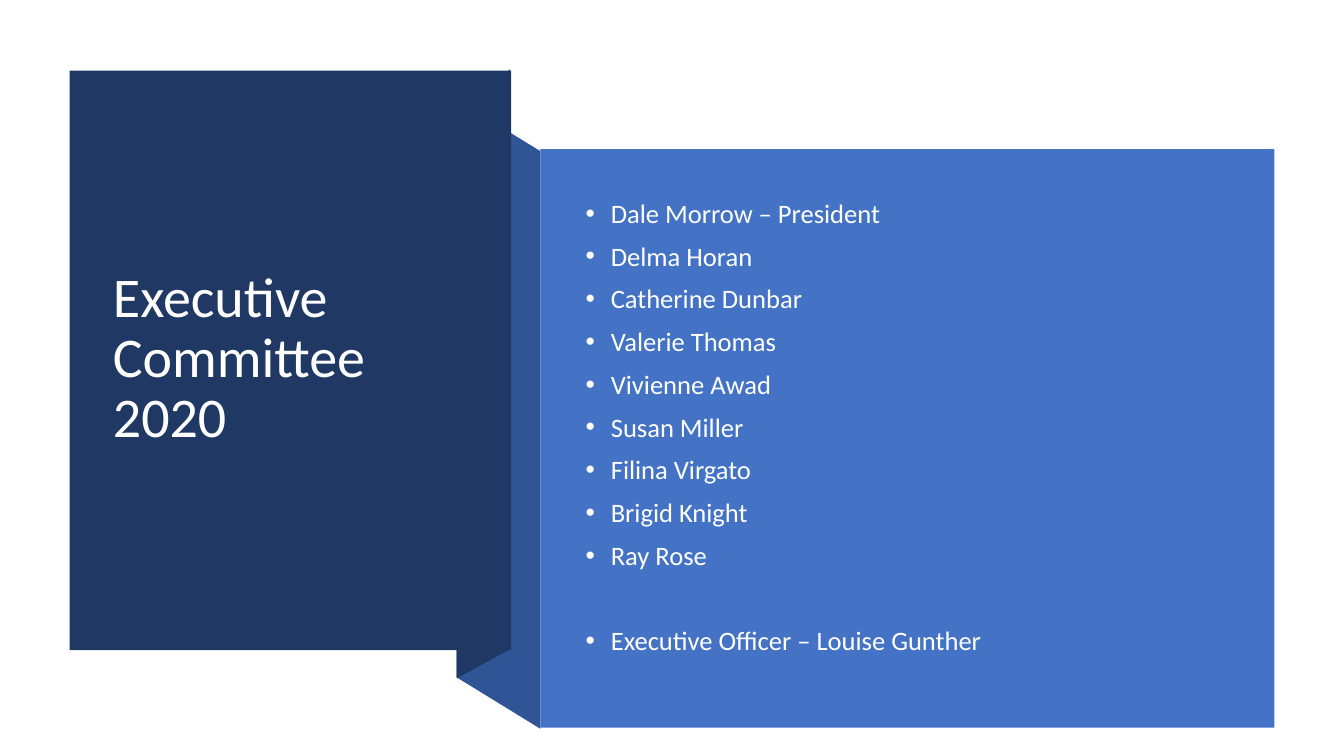
from dataclasses import dataclass

from lxml.etree import SubElement
from pptx import Presentation
from pptx.dml.color import RGBColor
from pptx.enum.shapes import MSO_SHAPE
from pptx.enum.text import MSO_ANCHOR, MSO_AUTO_SIZE, PP_ALIGN
from pptx.oxml.ns import qn
from pptx.util import Inches, Pt


@dataclass(frozen=True)
class Theme:
    navy: str = "203864"
    fold: str = "2F5597"
    blue: str = "4472C4"
    white: str = "FFFFFF"
    list_text: str = "FEFFFF"
    font: str = "Calibri"
    title_size: float = 40
    list_size: float = 19
    line_spacing: float = 0.9
    list_gap: float = 10
    officer_gap: float = 40.5
    indent: float = 0.25


class SlideBuilder:
    def __init__(self, slide, theme):
        self.slide = slide
        self.theme = theme

    def paint(self, shape, color):
        shape.fill.solid()
        shape.fill.fore_color.rgb = RGBColor.from_string(color)
        shape.line.fill.background()
        shape.shadow.inherit = False

    def panel(self, left, top, width, height, color):
        panel = self.slide.shapes.add_shape(
            MSO_SHAPE.RECTANGLE, Inches(left), Inches(top), Inches(width), Inches(height))
        self.paint(panel, color)

    def ribbon(self, points, color):
        corners = [(Inches(x), Inches(y)) for x, y in points]
        outline = self.slide.shapes.build_freeform(*corners[0])
        outline.add_line_segments(corners[1:], close=True)
        self.paint(outline.convert_to_shape(), color)

    def frame(self, holder):
        frame = holder.text_frame
        frame.word_wrap = True
        frame.auto_size = MSO_AUTO_SIZE.NONE
        frame.vertical_anchor = MSO_ANCHOR.MIDDLE
        return frame

    def style(self, paragraph, size, color, gap=0):
        paragraph.alignment = PP_ALIGN.LEFT
        paragraph.line_spacing = self.theme.line_spacing
        paragraph.space_before = Pt(gap)
        for run in paragraph.runs:
            run.font.name = self.theme.font
            run.font.size = Pt(size)
            run.font.color.rgb = RGBColor.from_string(color)

    def title(self, text, left, top, width, height):
        heading = self.slide.shapes.title
        heading.left, heading.top = Inches(left), Inches(top)
        heading.width, heading.height = Inches(width), Inches(height)
        self.slide.shapes[-1].element.addnext(heading.element)
        frame = self.frame(heading)
        frame.text = text
        self.style(frame.paragraphs[0], self.theme.title_size, self.theme.white)

    def bullets(self, entries, left, top, width, height):
        members = self.slide.shapes.add_textbox(
            Inches(left), Inches(top), Inches(width), Inches(height))
        frame = self.frame(members)
        frame.text = "\n".join(text for text, gap in entries)
        indent = Inches(self.theme.indent)
        for paragraph, (text, gap) in zip(frame.paragraphs, entries):
            self.style(paragraph, self.theme.list_size, self.theme.list_text, gap)
            properties = paragraph._p.get_or_add_pPr()
            properties.set("marL", str(indent))
            properties.set("indent", str(-indent))
            SubElement(properties, qn("a:buFont"), typeface="Arial")
            SubElement(properties, qn("a:buChar"), char="•")


def main():
    theme = Theme()
    presentation = Presentation()
    presentation.slide_width = Inches(13.33)
    presentation.slide_height = Inches(7.5)
    slide = presentation.slides.add_slide(presentation.slide_layouts[5])
    builder = SlideBuilder(slide, theme)

    builder.ribbon([(5.36, 7.23), (4.53, 6.72), (4.53, 0.99), (5.36, 1.5)], theme.fold)
    builder.ribbon([(5.06, 6.44), (4.53, 6.73), (4.53, 0.98), (5.06, 0.69)], theme.navy)
    builder.panel(0.69, 0.7, 4.38, 5.75, theme.navy)
    builder.title("Executive Committee 2020", 1.02, 1.07, 3.71, 4.99)
    builder.panel(5.36, 1.48, 7.28, 5.74, theme.blue)

    committee = [
        "Dale Morrow – President",
        "Delma Horan",
        "Catherine Dunbar",
        "Valerie Thomas",
        "Vivienne Awad",
        "Susan Miller",
        "Filina Virgato",
        "Brigid Knight",
        "Ray Rose",
    ]
    entries = [(member, theme.list_gap) for member in committee]
    entries.append(("Executive Officer – Louise Gunther", theme.officer_gap))
    builder.bullets(entries, 5.71, 1.88, 6.51, 4.74)

    presentation.save("out.pptx")


if __name__ == "__main__":
    main()
